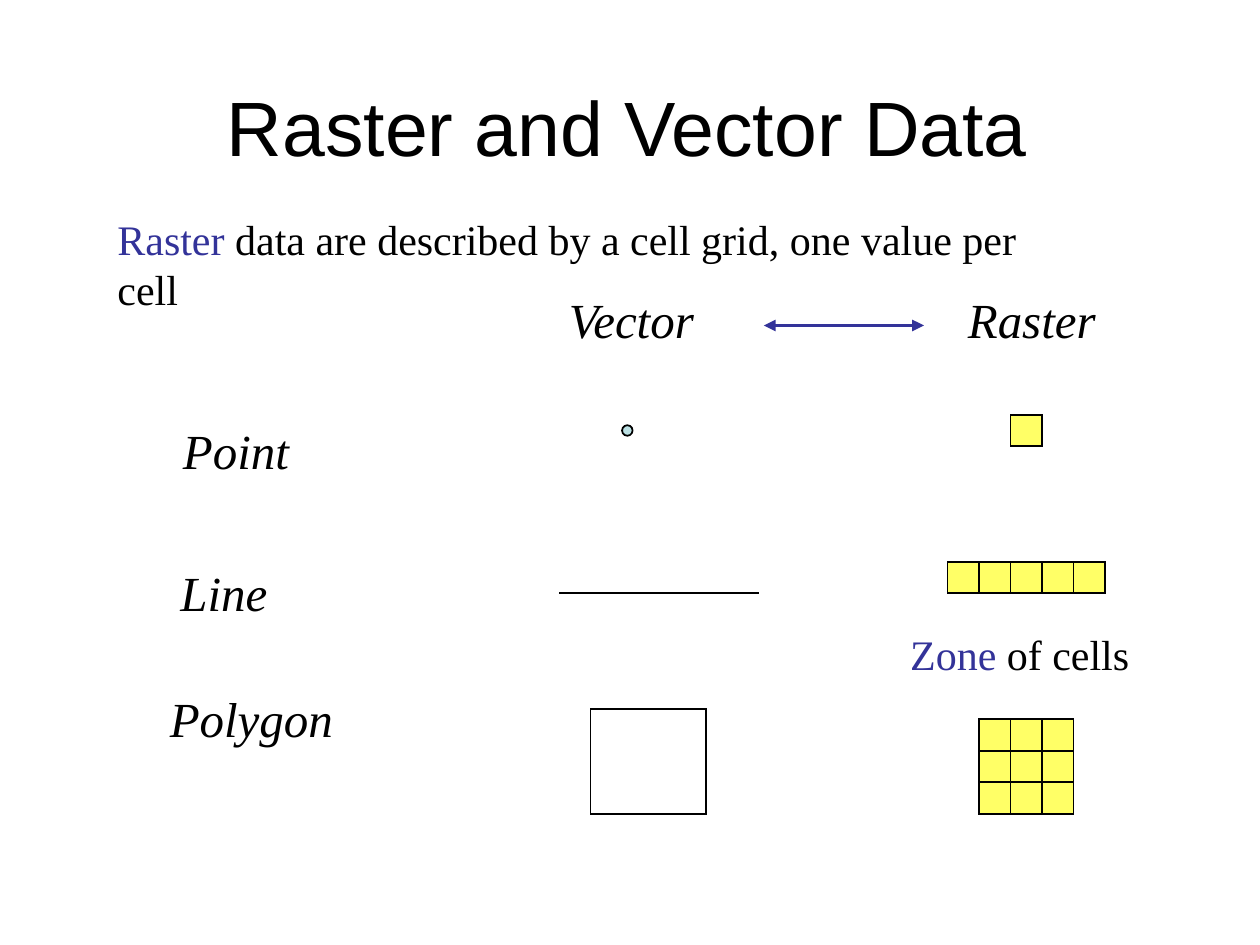
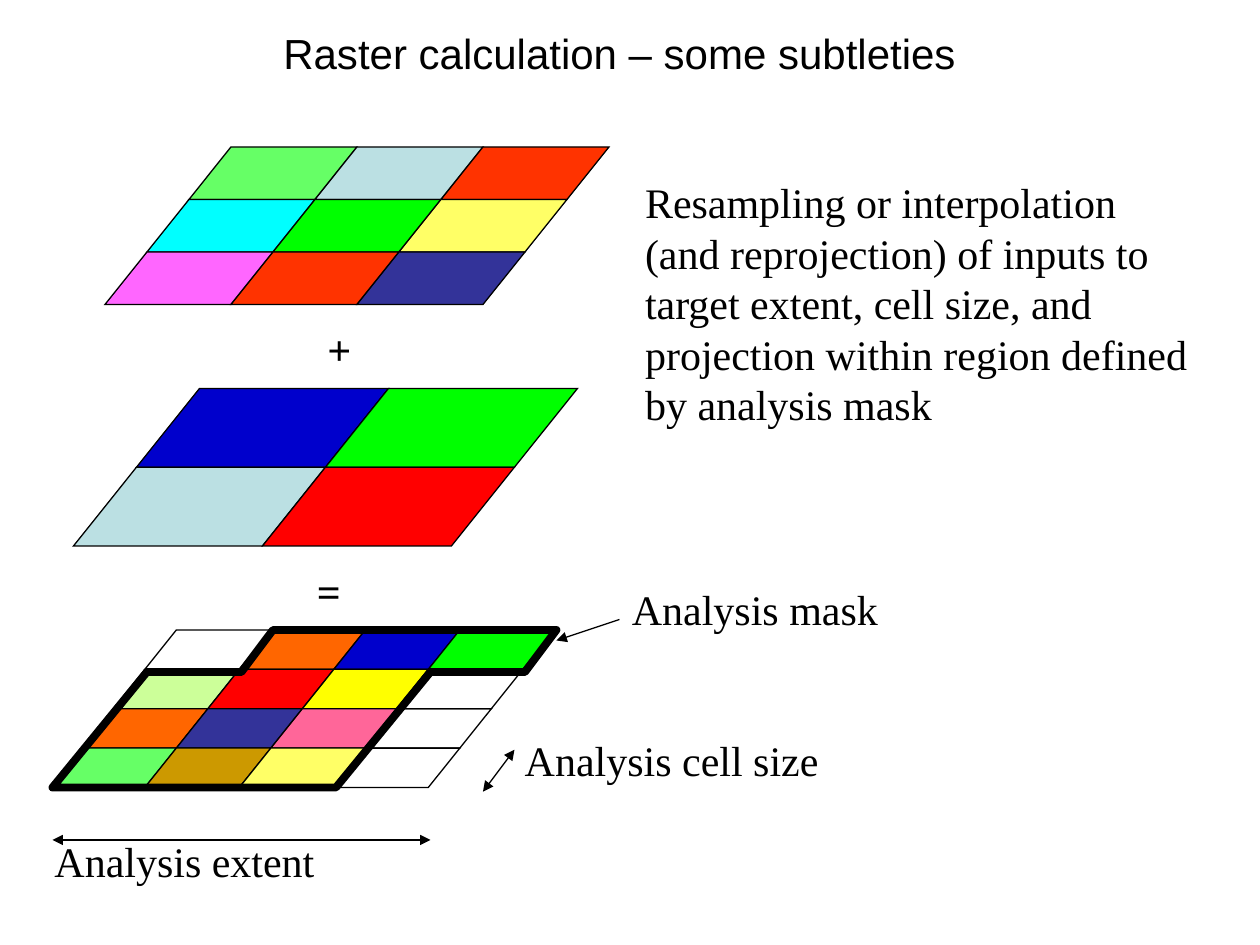
from dataclasses import dataclass

from lxml.etree import SubElement
from pptx import Presentation
from pptx.dml.color import RGBColor
from pptx.enum.shapes import MSO_CONNECTOR, MSO_SHAPE
from pptx.enum.text import MSO_ANCHOR, PP_ALIGN
from pptx.oxml.ns import qn
from pptx.util import Inches, Pt


@dataclass(frozen=True)
class Theme:
    ink: str = "000000"
    accent: str = "333399"
    cell: str = "FFFF66"
    pale: str = "BBE0E3"
    title_font: str = "Arial"
    body_font: str = "Times New Roman"
    title_size: int = 44
    label_size: int = 28
    body_size: int = 24
    thin: float = 0.75
    normal: float = 1
    arrow: float = 2.25
    heavy: float = 4.5


theme = Theme()

# Grid: 12 columns and 12 rows to the inch
COLUMNS, ROWS = 120, 90
UNIT = Inches(1) // 12

deck = Presentation()
deck.slide_width, deck.slide_height = COLUMNS * UNIT, ROWS * UNIT
BLANK = deck.slide_layouts[6]

BODY = {"name": theme.body_font, "size": Pt(theme.body_size)}
LABEL = {"name": theme.body_font, "size": Pt(theme.label_size), "italic": True}
SIGN = {**BODY, "bold": True}
TITLE = {"name": theme.title_font, "size": Pt(theme.title_size)}
SMALL_TITLE = {**TITLE, "size": Pt(theme.body_size)}


def add_text(page, place, spans, font_format, centred=False):
    """Write (text, colour) spans in a box placed in grid units."""
    box = page.shapes.add_textbox(*[int(n * UNIT) for n in place])
    frame = box.text_frame
    frame.word_wrap = True
    para = frame.paragraphs[0]
    if centred:
        frame.vertical_anchor = MSO_ANCHOR.MIDDLE
        para.alignment = PP_ALIGN.CENTER
    for text, colour in spans:
        span = para.add_run()
        span.text = text
        span.font.color.rgb = RGBColor.from_string(colour)
        for name, value in font_format.items():
            setattr(span.font, name, value)


def set_outline(item, width, colour=theme.ink, ends=()):
    """Set the line of a shape or connector, its arrowheads, and no shadow."""
    item.line.color.rgb = RGBColor.from_string(colour)
    item.line.width = Pt(width)
    properties = item._element.spPr
    line = properties.find(qn("a:ln"))
    SubElement(line, qn("a:round" if width == theme.heavy else "a:miter"))
    for end in ends:
        SubElement(line, qn(f"a:{end}"), type="triangle")
    SubElement(properties, qn("a:effectLst"))


BOTH_ENDS = ("headEnd", "tailEnd")

# ---- Slide 1: vector and raster forms ----
page = deck.slides.add_slide(BLANK)
add_text(page, (8.75, 4.5, 102, 15), [("Raster and Vector Data", theme.ink)], TITLE, True)

for text, left, top, width in [
    ("Point", 16.25, 39.5, 17),
    ("Line", 16, 53, 11),
    ("Polygon", 15, 65, 19),
    ("Vector", 53, 27, 15),
    ("Raster", 91, 27, 15.5),
]:
    add_text(page, (left, top, width, 6.8), [(text, theme.ink)], LABEL)

for keyword, rest, place in [
    ("Raster", " data are described by a cell grid, one value per cell", (10, 19.75, 94.75, 6)),
    ("Zone", " of cells", (85.5, 59.25, 24, 6)),
]:
    add_text(page, place, [(keyword, theme.accent), (rest, theme.ink)], BODY)

# Vector point and polygon, then raster cells centred on one axis
CELL, RASTER_AXIS = 3, 97.75
figures = [
    (MSO_SHAPE.OVAL, (59.25, 40.5, 1, 1), theme.pale),
    (MSO_SHAPE.RECTANGLE, (56.25, 67.5, 11, 10), None),
]
for columns, rows, top in [(1, 1, 39.5), (5, 1, 53.5), (3, 3, 68.5)]:
    left = RASTER_AXIS - columns * CELL / 2
    figures += [
        (MSO_SHAPE.RECTANGLE, (left + column * CELL, top + row * CELL, CELL, CELL), theme.cell)
        for row in range(rows)
        for column in range(columns)
    ]
for kind, place, colour in figures:
    figure = page.shapes.add_shape(kind, *[int(n * UNIT) for n in place])
    if colour:
        figure.fill.solid()
        figure.fill.fore_color.rgb = RGBColor.from_string(colour)
    else:
        figure.fill.background()
    set_outline(figure, theme.normal)

# Vector line and the arrow between the headings
for ends_at, width, colour, heads in [
    ((53.25, 56.5, 72.25, 56.5), theme.normal, theme.ink, ()),
    ((72.75, 31, 88, 31), theme.arrow, theme.accent, BOTH_ENDS),
]:
    line = page.shapes.add_connector(MSO_CONNECTOR.STRAIGHT, *[int(n * UNIT) for n in ends_at])
    set_outline(line, width, colour, heads)

# ---- Slide 2: raster calculation ----
page = deck.slides.add_slide(BLANK)
add_text(page, (8, 0, 102, 10), [("Raster calculation – some subtleties", theme.ink)],
         SMALL_TITLE, True)

# Slanted rasters of one size, each cut into n by n cells
RASTER_WIDTH, RASTER_HEIGHT, RASTER_SLANT = 36, 15, 12
rasters = [
    (10, 14, [["66FF66", theme.pale, "FF3300"],
              ["00FFFF", "00FF00", theme.cell],
              ["FF66FF", "FF3300", theme.accent]]),
    (7, 37, [["0000CC", "00FF00"],
             [theme.pale, "FF0000"]]),
    (4.8, 60, [[None, "FF6600", "0000CC", "00FF00"],
               ["CCFF99", "FF0000", "FFFF00", None],
               ["FF6600", theme.accent, "FF6699", None],
               ["66FF66", "CC9900", theme.cell, None]]),
]
for left, top, colours in rasters:
    count = len(colours)
    step, height, slant = (n / count for n in (RASTER_WIDTH, RASTER_HEIGHT, RASTER_SLANT))
    for row, row_colours in enumerate(colours):
        for column, colour in enumerate(row_colours):
            place = (left + column * step + (count - 1 - row) * slant,
                     top + row * height, step + slant, height)
            cell = page.shapes.add_shape(MSO_SHAPE.PARALLELOGRAM, *[int(n * UNIT) for n in place])
            cell.adjustments[0] = slant / height
            if colour:
                cell.fill.solid()
                cell.fill.fore_color.rgb = RGBColor.from_string(colour)
            else:
                cell.fill.background()
            set_outline(cell, theme.thin)

# Analysis mask around the cells that count
mask_corners = [(4.75, 75), (13.75, 64), (22.75, 64), (25.75, 60),
                (52.75, 60), (49.75, 64), (40.75, 64), (31.75, 75)]
builder = page.shapes.build_freeform(*mask_corners[0], scale=UNIT)
builder.add_line_segments(mask_corners[1:], close=True)
mask = builder.convert_to_shape()
mask.fill.background()
set_outline(mask, theme.heavy)

# Extent, cell size and mask arrows
for ends_at, heads in [
    ((5, 80, 41, 80), BOTH_ENDS),
    ((46, 75.4, 49, 71.4), BOTH_ENDS),
    ((59, 59, 53, 61), ("tailEnd",)),
]:
    arrow = page.shapes.add_connector(MSO_CONNECTOR.STRAIGHT, *[int(n * UNIT) for n in ends_at])
    set_outline(arrow, theme.thin, ends=heads)

# Signs, labels and explanation
for text, place, font_format in [
    ("+", (30, 30.25, 5, 6), SIGN),
    ("=", (29, 53.25, 5, 6), SIGN),
    ("Analysis extent", (4, 79, 38, 6), BODY),
    ("Analysis cell size", (48.8, 69.4, 42, 6), BODY),
    ("Analysis mask", (59, 55, 34, 6), BODY),
    ("Resampling or interpolation (and reprojection) of inputs to target extent, "
     "cell size, and projection within region defined by analysis mask",
     (60.25, 16.25, 54.75, 25), BODY),
]:
    add_text(page, place, [(text, theme.ink)], font_format)

deck.save("out.pptx")
